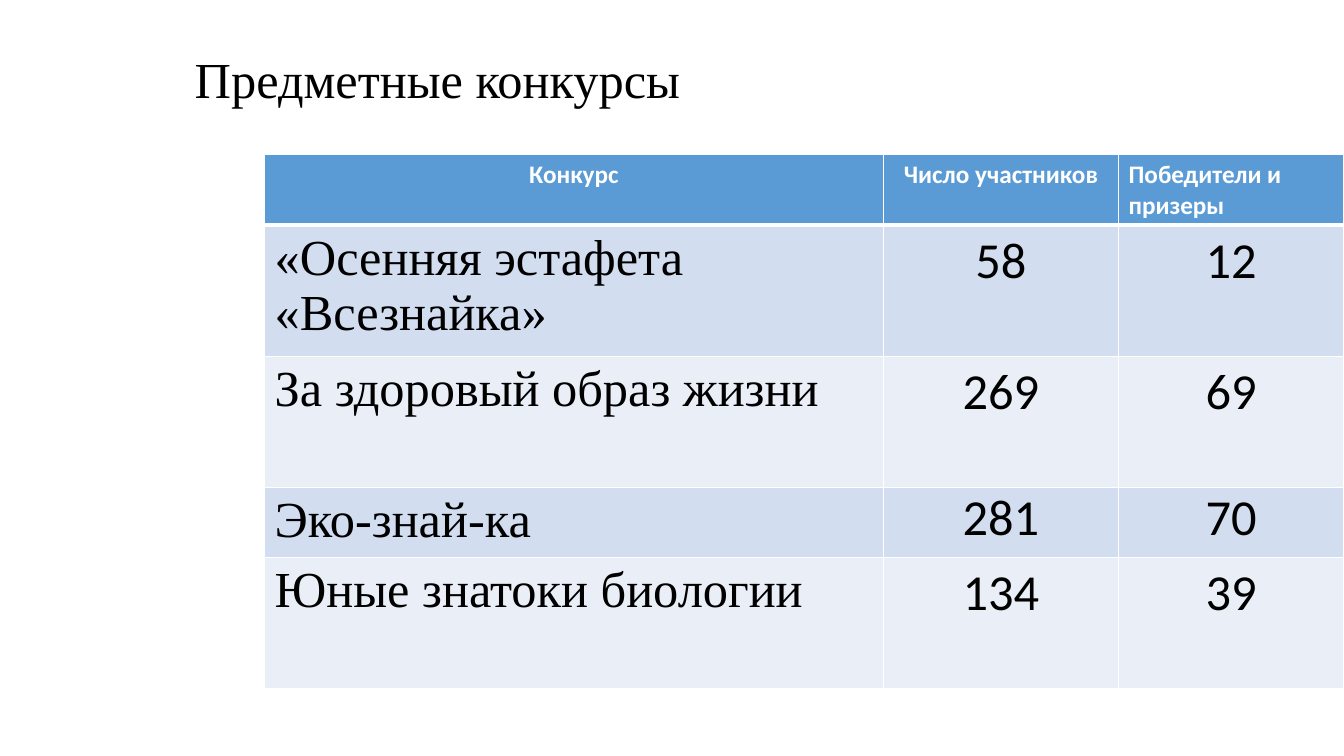
from lxml import etree
from pptx import Presentation
from pptx.dml.color import RGBColor
from pptx.enum.text import MSO_ANCHOR, PP_ALIGN
from pptx.oxml.ns import qn
from pptx.util import Pt

LEFT, CENTER = PP_ALIGN.LEFT, PP_ALIGN.CENTER
MIDDLE = MSO_ANCHOR.MIDDLE

SERIF, SANS = "Times New Roman", "Calibri"
BLACK, WHITE = "000000", "FFFFFF"
HEADER_FILL = "5B9BD5"
BAND_FILLS = ("D2DEEF", "EAEFF7")

COLUMN_WIDTHS = (442, 168, 161)
ROW_HEIGHTS = (50.4, 93.6, 93.6, 50.4, 93.6)
HEADERS = ("Конкурс", "Число участников", "Победители и призеры")
CONTESTS = (
    ("«Осенняя эстафета «Всезнайка»", 58, 12),
    ("За здоровый образ жизни", 269, 69),
    ("Эко-знай-ка", 281, 70),
    ("Юные знатоки биологии", 134, 39),
)
CELL_MARGINS = (7.2, 3.6)
# Row and column of cells with their own side and top margins
SPECIAL_MARGINS = {(3, 1): (0, 0), (3, 2): (5, 0)}


def color(value):
    return RGBColor.from_string(value)


def format_text(frame, size, font, text_color, align=LEFT, bold=False):
    for para in frame.paragraphs:
        para.alignment = align
        for span in para.runs:
            span.font.size = Pt(size)
            span.font.name = font
            span.font.bold = bold
            span.font.color.rgb = color(text_color)


def set_margins(item, side, top):
    item.margin_left = item.margin_right = Pt(side)
    item.margin_top = item.margin_bottom = Pt(top)


def add_title(page, text):
    box = page.shapes.add_textbox(Pt(132), Pt(6.5), Pt(800), Pt(104.4))
    frame = box.text_frame
    frame.word_wrap = True
    frame.vertical_anchor = MIDDLE
    frame.text = text
    frame.paragraphs[0].line_spacing = 0.9
    format_text(frame, 36, SERIF, BLACK)


def set_borders(cell, row):
    """White lines, thicker between the header and the body."""
    top = 3 if row == 1 else 1
    bottom = 3 if row == 0 else 1
    properties = cell._tc.get_or_add_tcPr()
    sides = (("a:lnL", 1), ("a:lnR", 1), ("a:lnT", top), ("a:lnB", bottom))
    for position, (tag, width) in enumerate(sides):
        line = etree.Element(qn(tag), w=str(Pt(width)))
        fill = etree.SubElement(line, qn("a:solidFill"))
        etree.SubElement(fill, qn("a:srgbClr"), val=WHITE)
        properties.insert(position, line)


def fill_cell(cell, row, column, value):
    header = row == 0
    cell.text_frame.text = str(value)
    set_margins(cell, *SPECIAL_MARGINS.get((row, column), CELL_MARGINS))
    cell.fill.solid()
    cell.fill.fore_color.rgb = color(HEADER_FILL if header else BAND_FILLS[(row - 1) % 2])
    set_borders(cell, row)
    if header:
        align = LEFT if column == 2 else CENTER
        format_text(cell.text_frame, 18, SANS, WHITE, align, bold=True)
    elif column == 0:
        format_text(cell.text_frame, 36, SERIF, BLACK)
    else:
        format_text(cell.text_frame, 36, SANS, BLACK, CENTER)


def add_contest_table(page):
    rows = (HEADERS,) + CONTESTS
    frame = page.shapes.add_table(
        len(rows), len(HEADERS), Pt(189), Pt(110.4),
        Pt(sum(COLUMN_WIDTHS)), Pt(sum(ROW_HEIGHTS)))
    table = frame.table
    for column, width in zip(table.columns, COLUMN_WIDTHS):
        column.width = Pt(width)
    for row, height in zip(table.rows, ROW_HEIGHTS):
        row.height = Pt(height)
    for row_number, values in enumerate(rows):
        for column_number, value in enumerate(values):
            cell = table.cell(row_number, column_number)
            fill_cell(cell, row_number, column_number, value)


def main():
    deck = Presentation()
    deck.slide_width, deck.slide_height = Pt(960), Pt(540)
    page = deck.slides.add_slide(deck.slide_layouts[6])
    add_title(page, "Предметные конкурсы")
    add_contest_table(page)
    deck.save("out.pptx")


if __name__ == "__main__":
    main()
